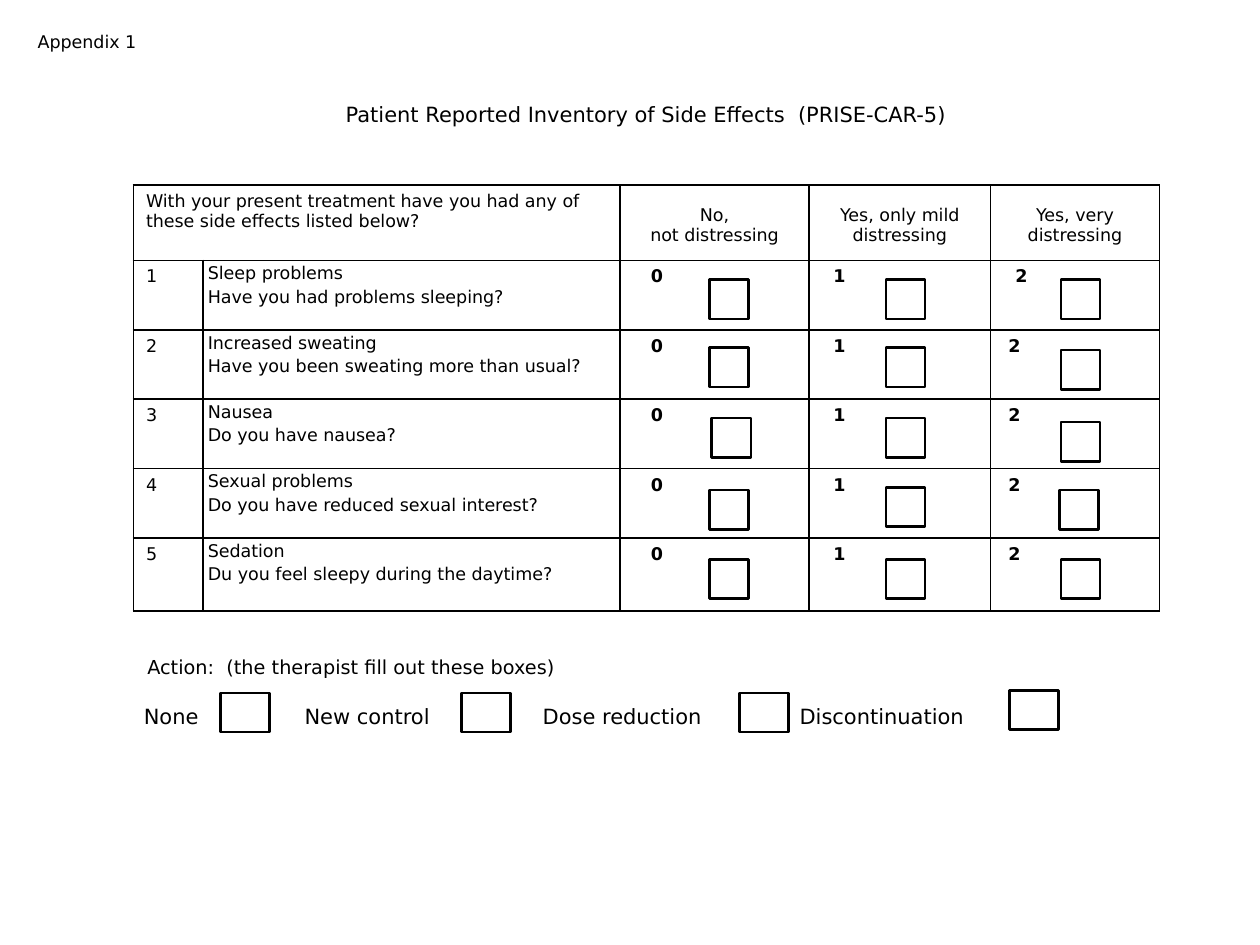
"""Build the side effect questionnaire slide with its answer table and tick boxes."""
from lxml import etree
from pptx import Presentation
from pptx import util as u
from pptx.dml.color import RGBColor
from pptx.enum import shapes, text
from pptx.oxml import ns


def colour(value):
    return RGBColor.from_string(value)


def write(frame, wording, size=10, bold=False, align=text.PP_ALIGN.LEFT, spacing=None,
          anchor=text.MSO_ANCHOR.TOP):
    frame.word_wrap = True
    frame.vertical_anchor = anchor
    para = frame.paragraphs[0]
    para.text = wording
    para.alignment = align
    para.line_spacing = spacing
    for span in para.runs:
        span.font.name = "DejaVu Sans"
        span.font.size = u.Pt(size)
        span.font.bold = bold
        span.font.color.rgb = colour("000000")


deck = Presentation()
deck.slide_width, deck.slide_height = u.Cm(25.4), u.Cm(19.05)
page = deck.slides.add_slide(deck.slide_layouts[6])

widths = [1.4, 8.41, 3.81, 3.66, 3.4]
heights = [1.52, 1.4, 1.4, 1.4, 1.4, 1.47]
table = page.shapes.add_table(6, 5, u.Cm(2.69), u.Cm(3.73),
                              u.Cm(sum(widths)), u.Cm(sum(heights))).table
table.first_row = table.horz_banding = False
for column, width in zip(table.columns, widths):
    column.width = u.Cm(width)
for row, height in zip(table.rows, heights):
    row.height = u.Cm(height)

for cell in table.iter_cells():
    properties = cell._tc.get_or_add_tcPr()
    for side in ("lnL", "lnR", "lnT", "lnB"):
        line = etree.SubElement(properties, ns.qn(f"a:{side}"), w=str(u.Pt(1)))
        fill = etree.SubElement(line, ns.qn("a:solidFill"))
        etree.SubElement(fill, ns.qn("a:srgbClr"), val="000000")
    cell.fill.background()

table.cell(0, 0).merge(table.cell(0, 1))
write(table.cell(0, 0).text_frame,
      "With your present treatment have you had any of these side effects listed below?")
answers = ["No,\nnot distressing", "Yes, only mild distressing", "Yes, very distressing"]
for index, answer in enumerate(answers, 2):
    cell = table.cell(0, index)
    cell.margin_left = cell.margin_right = u.Cm(0.18)
    cell.margin_top, cell.margin_bottom = u.Cm(0.41), 0
    write(cell.text_frame, answer.replace("\n", "\v"), align=text.PP_ALIGN.CENTER)

questions = [
    ("Sleep problems", "Have you had problems sleeping?"),
    ("Increased sweating", "Have you been sweating more than usual?"),
    ("Nausea", "Do you have nausea?"),
    ("Sexual problems", "Do you have reduced sexual interest?"),
    ("Sedation", "Du you feel sleepy during the daytime?"),
]
for number, question in enumerate(questions, 1):
    write(table.cell(number, 0).text_frame, str(number))
    cell = table.cell(number, 1)
    cell.margin_left = cell.margin_right = u.Cm(0.1)
    cell.margin_top = cell.margin_bottom = 0
    write(cell.text_frame, "\v".join(question), spacing=1.15)
    for score, indent in enumerate([0.62, 0.49, 0.5 if number == 1 else 0.36]):
        cell = table.cell(number, score + 2)
        cell.margin_left = u.Cm(indent)
        write(cell.text_frame, str(score), bold=True, anchor=text.MSO_ANCHOR.MIDDLE)

labels = [
    ("Appendix 1", 0.51, 0.51, 2.79, 0.69, 10, text.PP_ALIGN.LEFT),
    ("Patient Reported Inventory of Side Effects  (PRISE-CAR-5)",
     3.78, 1.93, 18.49, 0.76, 12, text.PP_ALIGN.CENTER),
    ("Action:  (the therapist fill out these boxes)",
     2.97, 13.08, 12, 0.69, 11, text.PP_ALIGN.LEFT),
]
actions = [("None", 2.9, 4.45, 13.97), ("New control", 6.14, 9.3, 13.97),
           ("Dose reduction", 10.94, 14.91, 13.97), ("Discontinuation", 16.12, 20.35, 13.92)]
for action, left, tick, top in actions:
    labels.append((action, left, 14.05, 3.9, 0.76, 12, text.PP_ALIGN.LEFT))
for wording, left, top, width, height, size, align in labels:
    box = page.shapes.add_textbox(u.Cm(left), u.Cm(top), u.Cm(width), u.Cm(height))
    if top > 13:
        box.text_frame.margin_left = 0
    write(box.text_frame, wording, size=size, align=align)

ticks = [(tick, top, 0.99) for action, left, tick, top in actions]
tick_columns = [
    ([14.3, 14.3, 14.35, 14.3, 14.3], [5.64, 7.01, 8.43, 9.88, 11.28]),
    ([17.86] * 5, [5.64, 7.01, 8.43, 9.83, 11.28]),
    ([21.39, 21.39, 21.39, 21.36, 21.39], [5.64, 7.06, 8.51, 9.88, 11.28]),
]
for lefts, tops in tick_columns:
    ticks += [(left, top, 0.79) for left, top in zip(lefts, tops)]
for left, top, width in ticks:
    box = page.shapes.add_shape(shapes.MSO_SHAPE.RECTANGLE, u.Cm(left), u.Cm(top),
                                u.Cm(width), u.Cm(0.79))
    box.shadow.inherit = False
    box.fill.background()
    box.line.color.rgb = colour("000000")
    box.line.width = u.Pt(1.5)

deck.save("out.pptx")
